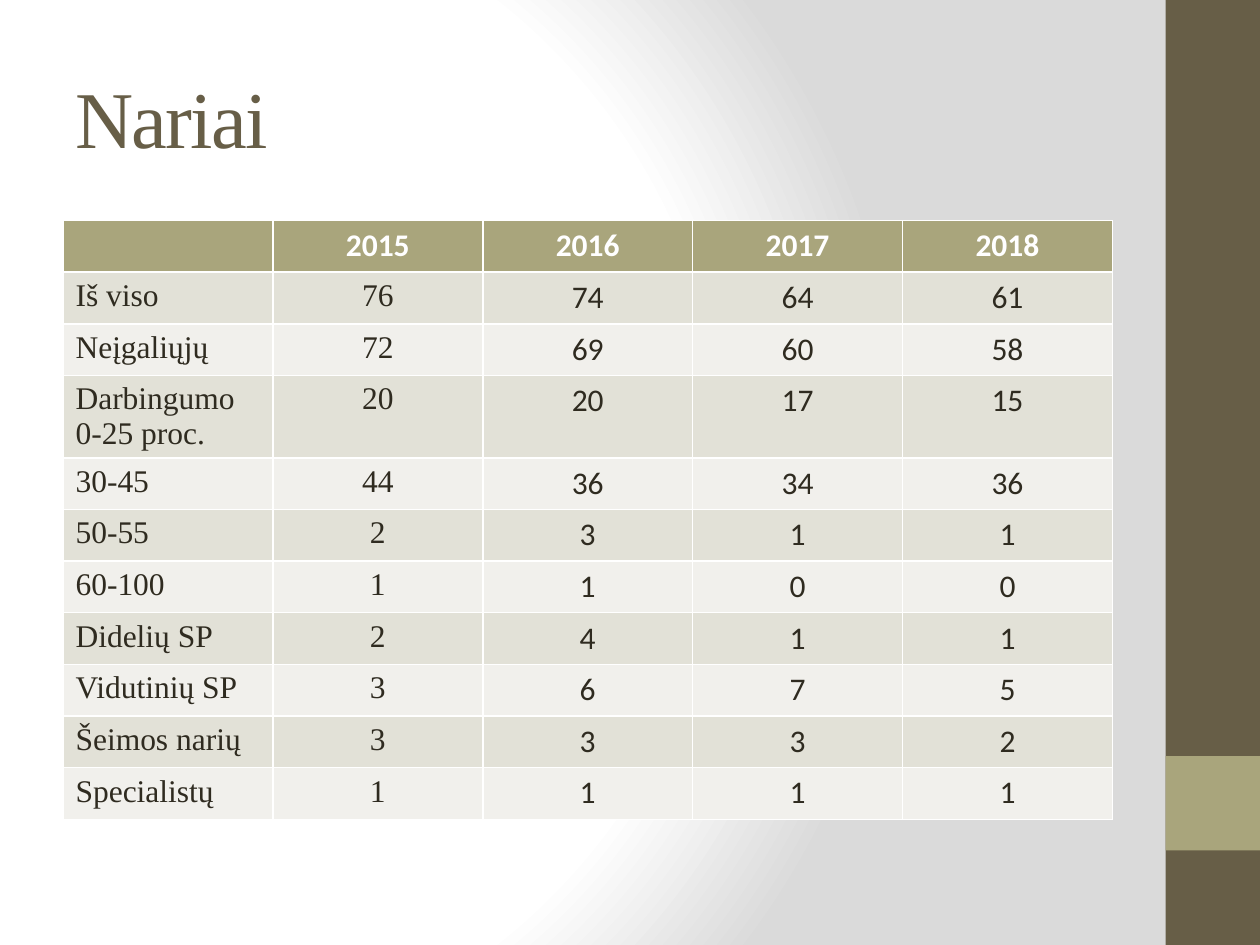
import dataclasses

import pptx
import pptx.dml.color
import pptx.enum.shapes
import pptx.enum.text
import pptx.oxml
import pptx.oxml.ns
import pptx.slide
import pptx.table
import pptx.util

Inches = pptx.util.Inches
ALIGN = pptx.enum.text.PP_ALIGN

COLORS = {
    "brown": "675E47",
    "olive": "A9A57C",
    "ink": "2F2B20",
    "dark": "E2E1D7",
    "light": "F1F0EC",
    "white": "FFFFFF",
    "gray": "DADADA",
}
SERIF = "Times New Roman"
SANS = "Calibri"
YEARS = ("2015", "2016", "2017", "2018")
STOPS = ((0, "white"), (75, "white"), (100, "gray"))


@dataclasses.dataclass
class Bar:
    top: float
    height: float
    color: str


@dataclasses.dataclass
class Group:
    label: str
    counts: tuple[int, ...]
    height: float = 0.41


BARS = (Bar(0, 7.5, "brown"), Bar(6, 0.75, "olive"))
GROUPS = (
    Group("Iš viso", (76, 74, 64, 61)),
    Group("Neįgaliųjų", (72, 69, 60, 58)),
    Group("Darbingumo\n0-25 proc.", (20, 20, 17, 15), 0.65),
    Group("30-45", (44, 36, 34, 36)),
    Group("50-55", (2, 3, 1, 1)),
    Group("60-100", (1, 1, 0, 0)),
    Group("Didelių SP", (2, 4, 1, 1)),
    Group("Vidutinių SP", (3, 6, 7, 5)),
    Group("Šeimos narių", (3, 3, 3, 2)),
    Group("Specialistų", (1, 1, 1, 1)),
)


def rgb(name: str) -> pptx.dml.color.RGBColor:
    return pptx.dml.color.RGBColor.from_string(COLORS[name])


def set_back(slide: pptx.slide.Slide) -> None:
    """Give the slide a radial gradient centred left of the middle."""
    stops = "".join(
        f'<a:gs pos="{pos * 1000}"><a:srgbClr val="{COLORS[name]}"/></a:gs>'
        for pos, name in STOPS
    )
    back = pptx.oxml.parse_xml(
        f'<p:bg {pptx.oxml.ns.nsdecls("p", "a")}><p:bgPr>'
        f'<a:gradFill rotWithShape="1"><a:gsLst>{stops}</a:gsLst>'
        '<a:path path="circle">'
        '<a:fillToRect l="20000" t="50000" r="100000" b="50000"/>'
        "</a:path></a:gradFill><a:effectLst/></p:bgPr></p:bg>"
    )
    slide.element.cSld.insert(0, back)


def add_bar(slide: pptx.slide.Slide, bar: Bar) -> None:
    shape = slide.shapes.add_shape(
        pptx.enum.shapes.MSO_SHAPE.RECTANGLE,
        Inches(9.25), Inches(bar.top), Inches(0.75), Inches(bar.height),
    )
    shape.shadow.inherit = False
    shape.fill.solid()
    shape.fill.fore_color.rgb = rgb(bar.color)
    shape.line.fill.background()


def set_title(slide: pptx.slide.Slide, text: str) -> None:
    title = slide.shapes.title
    title.left, title.top = Inches(0.5), Inches(0.3)
    title.width, title.height = Inches(8.33), Inches(1.25)
    frame = title.text_frame
    frame.text = text
    frame.vertical_anchor = pptx.enum.text.MSO_ANCHOR.MIDDLE
    para = frame.paragraphs[0]
    para.alignment = ALIGN.LEFT
    para.font.name = SERIF
    para.font.size = pptx.util.Pt(46)
    para.font.color.rgb = rgb("brown")
    para.runs[0].font._element.set("spc", "-100")


def fill_cell(cell: pptx.table._Cell, text: str, fill: str, ink: str,
              face: str, align: ALIGN, bold: bool = False) -> None:
    cell.fill.solid()
    cell.fill.fore_color.rgb = rgb(fill)
    cell.text = text
    for para in cell.text_frame.paragraphs:
        para.alignment = align
        para.font.name = face
        para.font.size = pptx.util.Pt(18)
        para.font.bold = bold
        para.font.color.rgb = rgb(ink)


def add_grid(slide: pptx.slide.Slide) -> None:
    """Add the table of members by group and year."""
    table = slide.shapes.add_table(
        len(GROUPS) + 1, len(YEARS) + 1,
        Inches(0.5), Inches(1.75), Inches(8.33), Inches(4.75),
    ).table
    table.rows[0].height = Inches(0.41)
    for col, text in enumerate(("", *YEARS)):
        fill_cell(table.cell(0, col), text, "olive", "white", SANS,
                  ALIGN.CENTER, True)
    for row, group in enumerate(GROUPS, 1):
        table.rows[row].height = Inches(group.height)
        fill = "dark" if row % 2 else "light"
        for col, text in enumerate((group.label, *map(str, group.counts))):
            face = SERIF if col < 2 else SANS
            align = ALIGN.CENTER if col else ALIGN.LEFT
            fill_cell(table.cell(row, col), text, fill, "ink", face, align)


def main() -> None:
    deck = pptx.Presentation()
    deck.slide_width, deck.slide_height = Inches(10), Inches(7.5)
    slide = deck.slides.add_slide(deck.slide_layouts[5])
    set_back(slide)
    for bar in BARS:
        add_bar(slide, bar)
    set_title(slide, "Nariai")
    add_grid(slide)
    deck.save("out.pptx")


if __name__ == "__main__":
    main()
